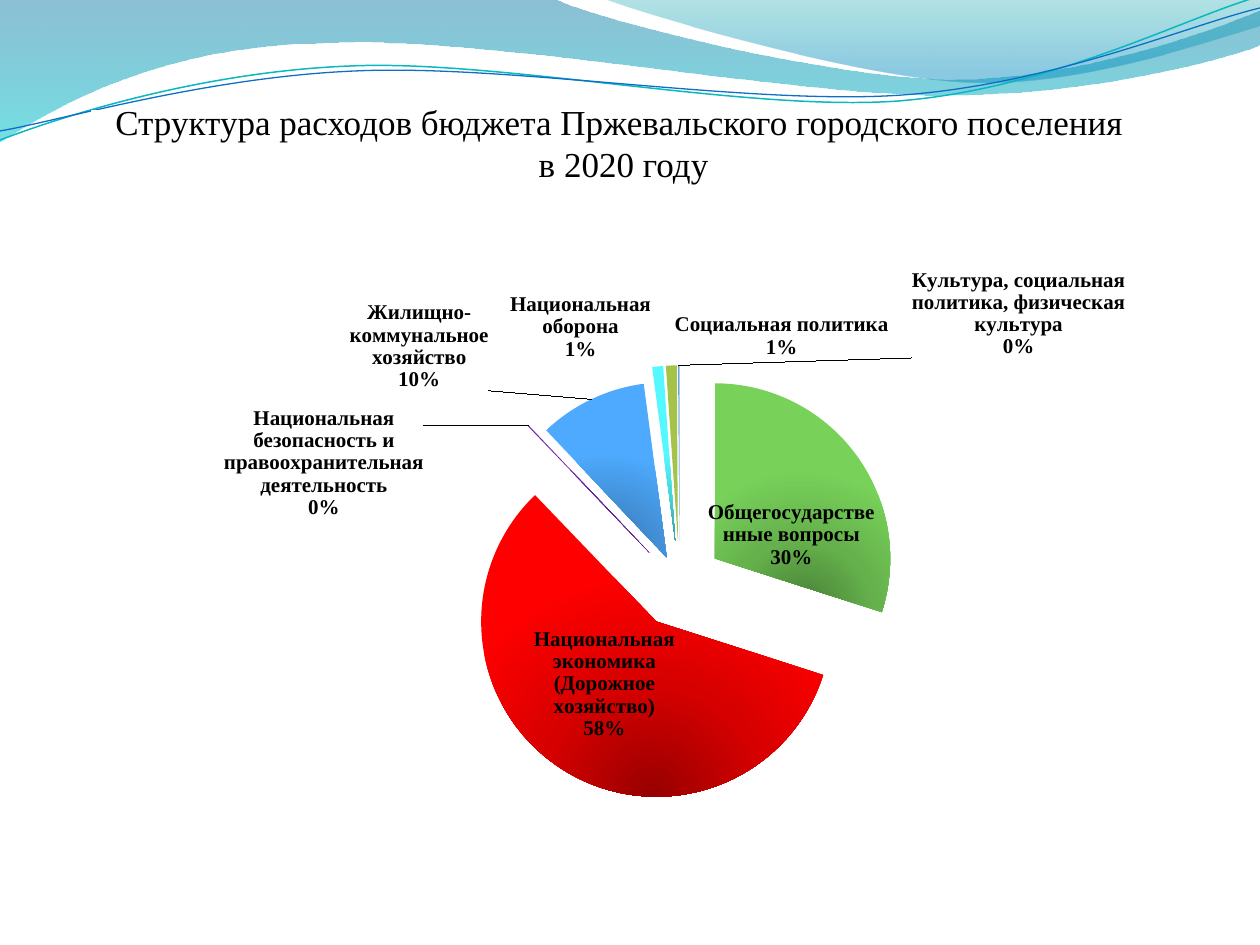
from lxml.etree import SubElement
from pptx import Presentation
from pptx.chart.data import CategoryChartData
from pptx.dml.color import RGBColor
from pptx.enum.chart import XL_CHART_TYPE as ChartType, XL_LABEL_POSITION as LabelPos
from pptx.enum.shapes import MSO_SHAPE as Shape
from pptx.enum.text import MSO_ANCHOR as Anchor, PP_ALIGN as Align
from pptx.oxml import parse_xml
from pptx.oxml.ns import nsdecls, qn
from pptx.util import Emu, Pt

PX = 914400 / 126
WHITE = RGBColor(0xFF, 0xFF, 0xFF)
BLACK = RGBColor(0, 0, 0)
TEAL = RGBColor(0x0A, 0xB8, 0xBF)
BLUE = RGBColor(0x0F, 0x6F, 0xC6)
OLIVE = RGBColor(0xA5, 0xC2, 0x49)
SERIF = "Times New Roman"
CHART_LEFT, CHART_TOP, CHART_WIDTH, CHART_HEIGHT = 105, 251, 1129, 645


def px(*lengths):
    return [Emu(round(length * PX)) for length in lengths]


def set_gradient(properties, stops, direction):
    """Put a gradient of (position, colour, opacity) stops, in percent, into a spPr."""
    marks = "".join(
        f'<a:gs pos="{place * 1000}"><a:srgbClr val="{colour}">'
        f'<a:alpha val="{opacity * 1000}"/></a:srgbClr></a:gs>'
        for place, colour, opacity in stops)
    old = properties.find(qn("a:solidFill"))
    properties.replace(old, parse_xml(
        f'<a:gradFill {nsdecls("a")} rotWithShape="1"><a:gsLst>{marks}</a:gsLst>{direction}</a:gradFill>'))


deck = Presentation()
deck.slide_width, deck.slide_height = px(1260, 945)
page = deck.slides.add_slide(deck.slide_layouts[6])

# Waves: a pair is a straight step, six numbers are a Bezier curve.
DOWN = '<a:lin ang="5400000" scaled="0"/>'
waves = [
    ([(0, 0), (554, -1), (600, 21, 837, 79, 955, 79), (1075, 79, 1207, 33, 1260, 11),
      (1261, 45), (1239, 55, 1096, 96, 940, 95), (784, 95, 481, 35, 324, 43),
      (163, 45, 58, 105, -1, 142)],
     [(0, "0074A1", 45), (100, "00C6CF", 55)], None, 0),
    ([(604, -1), (641, 14, 859, 78, 969, 82), (1079, 87, 1211, 40, 1260, 26), (1260, 0)],
     [(0, "00A1A9", 30), (80, "008BBF", 45)], None, 0),
    ([(0, 140), (60, 117, 199, 72, 349, 66), (498, 59, 747, 112, 898, 101),
      (1050, 89, 1182, 19, 1257, -3)], None, TEAL, 0.85),
    ([(0, 131), (59, 121, 207, 77, 356, 71), (508, 64, 752, 106, 903, 95),
      (1053, 84, 1186, 26, 1260, 8)], None, BLUE, 0.75),
]
for outline, stops, line_colour, line_width in waves:
    start, *steps = outline
    points = [px(*step[i:i + 2]) for step in steps for i in range(0, len(step), 2)]
    builder = page.shapes.build_freeform(*px(*start), scale=1.0)
    builder.add_line_segments(points, close=bool(stops))
    wave = builder.convert_to_shape()
    # Join the three straight steps of each curve into one Bezier step.
    segments = iter(wave.element.findall(".//" + qn("a:lnTo")))
    for step in steps:
        segment = next(segments)
        if len(step) == 6:
            segment.addprevious(parse_xml(f'<a:cubicBezTo {nsdecls("a")}/>'))
            curve = segment.getprevious()
            for part in (segment, next(segments), next(segments)):
                curve.append(part[0])
                part.getparent().remove(part)
    wave.shadow.inherit = False
    if stops:
        wave.line.fill.background()
        wave.fill.solid()
        set_gradient(wave.element.spPr, stops, DOWN)
    else:
        wave.fill.background()
        wave.line.color.rgb = line_colour
        wave.line.width = Pt(line_width)

title = page.shapes.add_shape(Shape.RECTANGLE, *px(92, 111, 1063, 74))
title.shadow.inherit = False
title.fill.solid()
title.fill.fore_color.rgb = WHITE
title.line.color.rgb = WHITE
title.line.width = Pt(0.75)
frame = title.text_frame
frame.word_wrap = True
frame.vertical_anchor = Anchor.BOTTOM
frame.margin_left = frame.margin_right = frame.margin_bottom = 0
para = frame.paragraphs[0]
para.alignment = Align.CENTER
para.text = "Структура расходов бюджета Пржевальского городского поселения \vв 2020 году"
for span in para.runs:
    span.font.size = Pt(20)
    span.font.name = SERIF
    span.font.color.rgb = BLACK

# Each slice: name, value, colours from dark to light, label position, label shift in px.
# The two slices labelled 0% keep a thin sliver.
INSIDE, OUTSIDE = LabelPos.CENTER, LabelPos.OUTSIDE_END
slices = [
    ("Общегосударственные вопросы", 30, ("477C35", "65B14C", "78D25A"), INSIDE, (6, 28)),
    ("Национальная экономика (Дорожное хозяйство)", 58,
     ("970000", "D70000", "FF0000"), INSIDE, (-6, -12)),
    ("Национальная безопасность и правоохранительная деятельность", 0.1,
     ("431764", "5F218E", "7128A8"), OUTSIDE, (-99, 98)),
    ("Жилищно-коммунальное хозяйство", 10, ("2E6596", "428FD6", "4EAAFE"), OUTSIDE, (-99, -2)),
    ("Национальная оборона", 1, ("319499", "46D3DA", "56F8FF"), INSIDE, (-86, -127)),
    ("Социальная политика", 1, OLIVE, OUTSIDE, (111, 0)),
    ("Культура, социальная политика, физическая культура", 0.1, BLUE, OUTSIDE, (340, 0)),
]
HOUSING, HOUSING_EXPLOSION = 3, 17
data = CategoryChartData()
data.categories = [name for name, *_ in slices]
data.add_series("Series 1", [value for _, value, *_ in slices])
chart = page.shapes.add_chart(
    ChartType.PIE, *px(CHART_LEFT, CHART_TOP, CHART_WIDTH, CHART_HEIGHT), data).chart
chart.has_title = False
chart.has_legend = False
chart.font.size = Pt(12)
chart.font.name = "Roboto"
chart.font.color.rgb = BLACK
plot = chart.plots[0]
plot.vary_by_categories = True
series = plot.series[0]

area = chart.element.find(".//" + qn("c:plotArea"))
for old in area.findall(qn("c:layout")):
    area.remove(old)
area.insert(0, parse_xml(
    f'<c:layout {nsdecls("c")}><c:manualLayout><c:layoutTarget val="inner"/>'
    '<c:xMode val="edge"/><c:yMode val="edge"/><c:x val="0.315"/><c:y val="0.177"/>'
    '<c:w val="0.388"/><c:h val="0.68"/></c:manualLayout></c:layout>'))

labels = series.data_labels
labels.number_format = "0%"
labels.number_format_is_linked = False
fonts = [labels.font]
FROM_BOTTOM = '<a:path path="circle"><a:fillToRect l="50000" t="100000" r="50000"/></a:path>'
for index, (_, _, colours, position, shift) in enumerate(slices):
    point = series.points[index]
    point.format.line.fill.background()
    point.format.fill.solid()
    properties = series._element.findall(qn("c:dPt"))[-1].find(qn("c:spPr"))
    if isinstance(colours, RGBColor):
        point.format.fill.fore_color.rgb = colours
    else:
        set_gradient(properties,
                     [(place, colour, 100) for place, colour in zip((0, 50, 100), colours)],
                     FROM_BOTTOM)
    if index == HOUSING:
        properties.addprevious(
            parse_xml(f'<c:explosion {nsdecls("c")} val="{HOUSING_EXPLOSION}"/>'))
    point.data_label.position = position
    fonts.append(point.data_label.font)
    mark = series._element.findall(".//" + qn("c:dLbl"))[-1]
    mark.find(qn("c:idx")).addnext(parse_xml(
        f'<c:layout {nsdecls("c")}><c:manualLayout><c:x val="{shift[0] / CHART_WIDTH:.3f}"/>'
        f'<c:y val="{shift[1] / CHART_HEIGHT:.3f}"/></c:manualLayout></c:layout>'))
for font in fonts:
    font.size = Pt(12)
    font.bold = True
    font.name = SERIF
    font.color.rgb = BLACK

group = series._element.find(qn("c:dLbls"))
for holder in [group, *group.findall(qn("c:dLbl"))]:
    for flag, shown in (("c:showVal", 0), ("c:showCatName", 1), ("c:showPercent", 1)):
        holder.find(qn(flag)).set("val", str(shown))
    holder.find(qn("c:showBubbleSize")).addnext(
        parse_xml(f'<c:separator {nsdecls("c")}>\n</c:separator>'))
leader = group.find(qn("c:showLeaderLines"))
if leader is None:
    leader = SubElement(group, qn("c:showLeaderLines"))
leader.set("val", "1")
series._element.find(qn("c:dPt")).addprevious(
    parse_xml(f'<c:explosion {nsdecls("c")} val="25"/>'))

deck.save("out.pptx")
